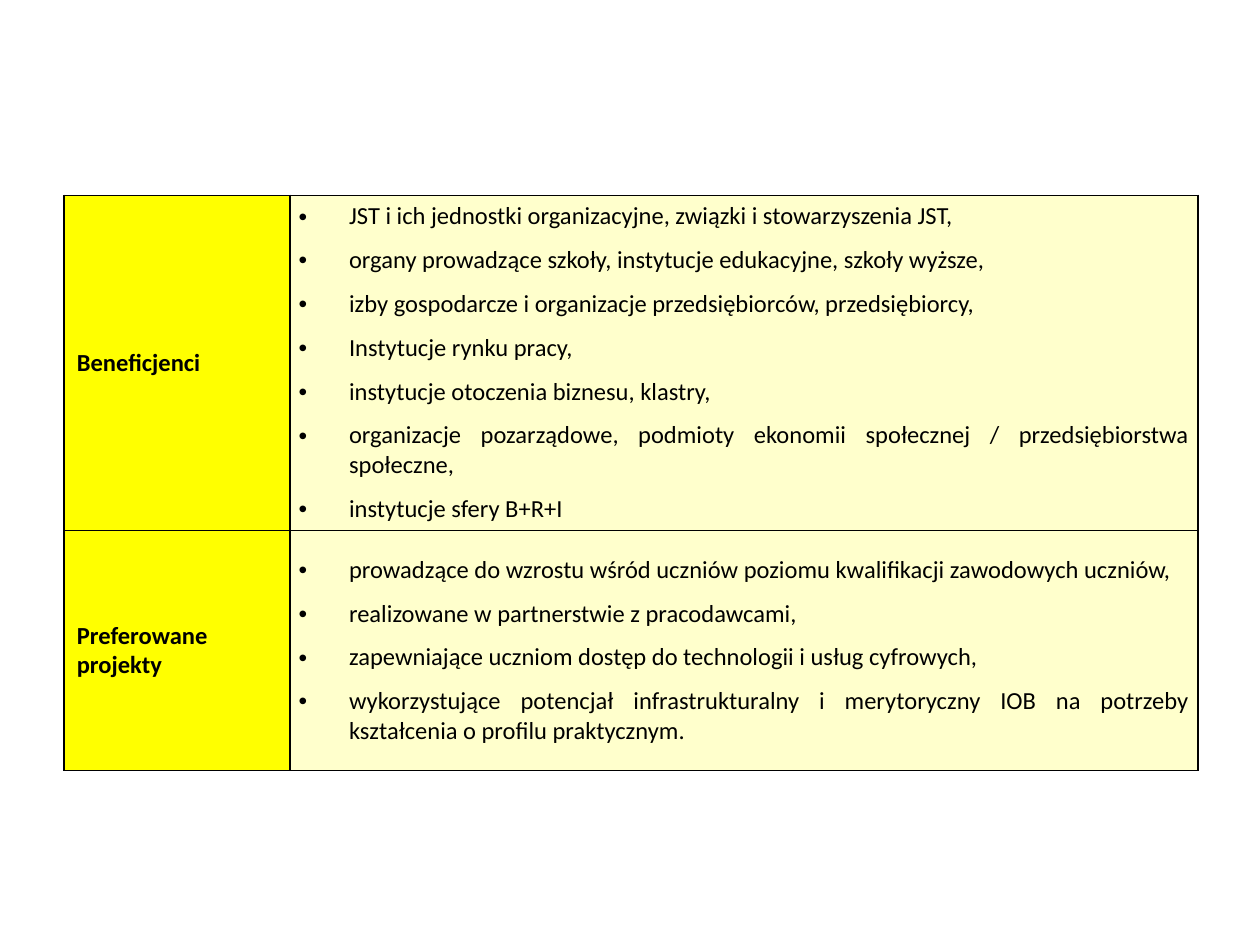
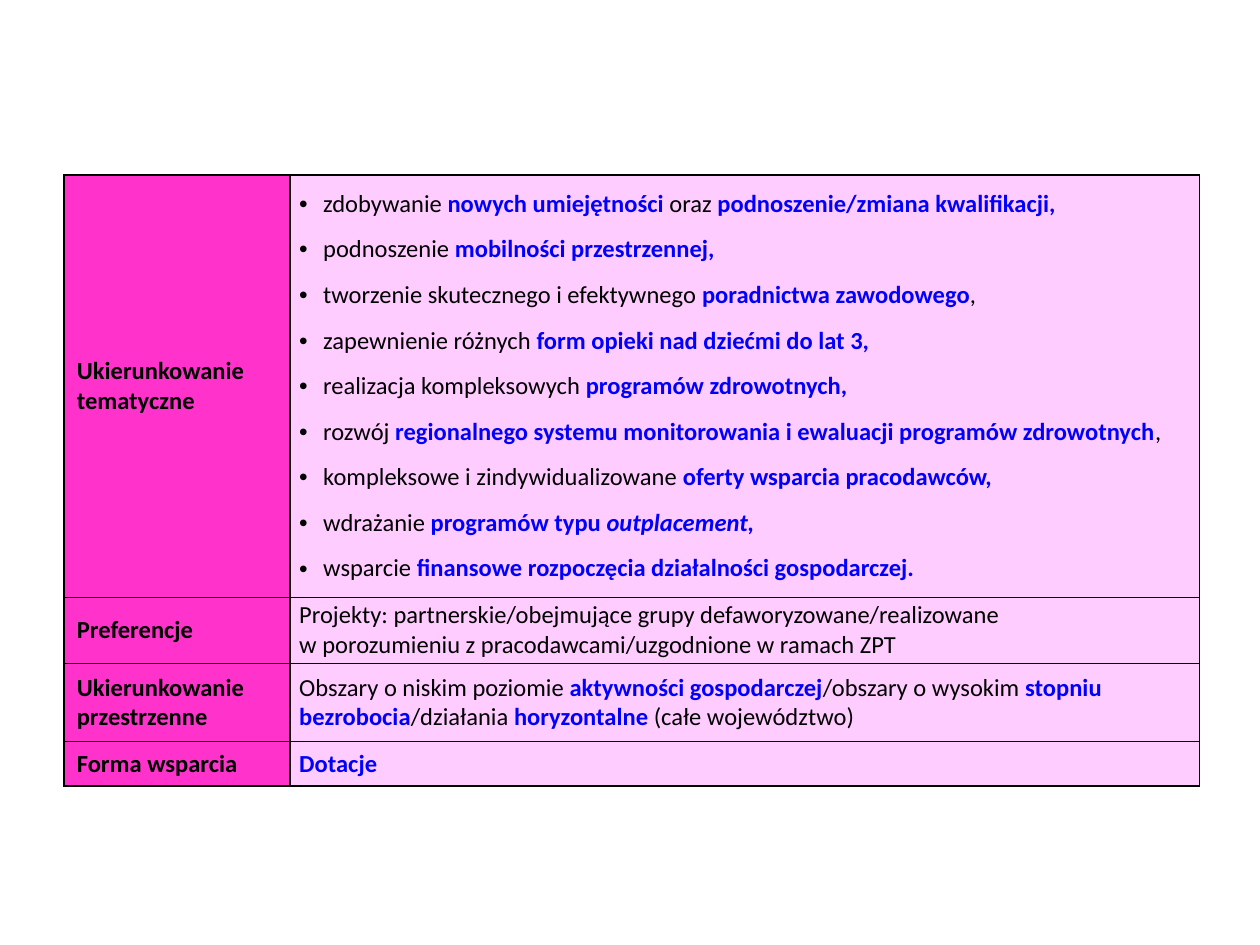
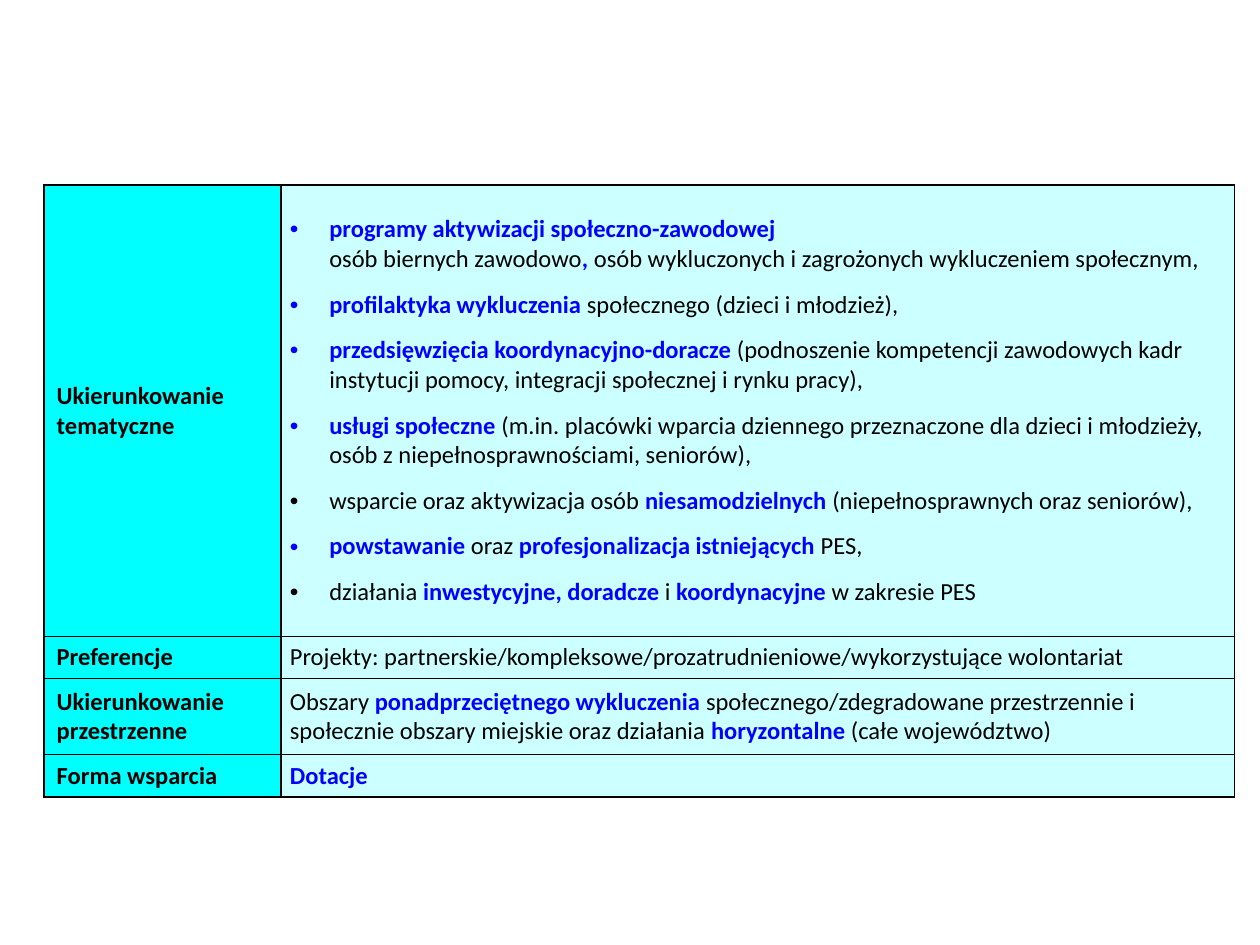
from lxml import etree
from pptx import Presentation
from pptx.dml.color import RGBColor
from pptx.enum.text import MSO_ANCHOR, PP_ALIGN
from pptx.oxml.ns import qn
from pptx.util import Pt

BLACK = RGBColor(0, 0, 0)
BLUE = RGBColor(0, 0, 255)
YELLOW = RGBColor(255, 255, 0)
CREAM = RGBColor(255, 255, 204)
MAGENTA = RGBColor(255, 51, 204)
PINK = RGBColor(255, 204, 255)
CYAN = RGBColor(0, 255, 255)
PALE_CYAN = RGBColor(204, 255, 255)

FONT = "Calibri"
SIZE = 14
KEYWORD, ITALIC = "*", "_"

TABLES = [
    {
        "corner": (36.7, 111.6), "columns": (128.9, 519.1), "colors": (YELLOW, CREAM),
        "align": PP_ALIGN.JUSTIFY, "indent": 28.8, "spacing": (8, 0), "inset": 5.1,
        "rows": [
            (191.5, "Beneficjenci", [
                "JST i ich jednostki organizacyjne, związki i stowarzyszenia JST,",
                "organy prowadzące szkoły, instytucje edukacyjne, szkoły wyższe,",
                "izby gospodarcze i organizacje przedsiębiorców, przedsiębiorcy,",
                "Instytucje rynku pracy,",
                "instytucje otoczenia biznesu, klastry,",
                "organizacje pozarządowe, podmioty ekonomii społecznej / przedsiębiorstwa społeczne,",
                "instytucje sfery B+R+I",
            ]),
            (137.3, "Preferowane projekty", [
                "prowadzące do wzrostu wśród uczniów poziomu kwalifikacji zawodowych uczniów,",
                "realizowane w partnerstwie z pracodawcami,",
                "zapewniające uczniom dostęp do technologii i usług cyfrowych,",
                "wykorzystujące potencjał infrastrukturalny i merytoryczny IOB na potrzeby "
                "kształcenia o profilu praktycznym.",
            ]),
        ],
    },
    {
        "corner": (36.7, 100.1), "columns": (128.9, 519.8), "colors": (MAGENTA, PINK),
        "align": PP_ALIGN.JUSTIFY, "indent": 13.7, "spacing": (6, 3), "inset": 5.4,
        "rows": [
            (241.2, "Ukierunkowanie tematyczne", [
                "zdobywanie *nowych umiejętności *oraz *podnoszenie/zmiana kwalifikacji,*",
                "podnoszenie *mobilności przestrzennej,*",
                "tworzenie skutecznego i efektywnego *poradnictwa zawodowego*,",
                "zapewnienie różnych *form opieki nad dziećmi do lat 3,*",
                "realizacja kompleksowych *programów zdrowotnych,*",
                "rozwój *regionalnego systemu monitorowania i ewaluacji programów zdrowotnych*,",
                "kompleksowe i zindywidualizowane *oferty wsparcia pracodawców,*",
                "wdrażanie *programów typu _outplacement,_*",
                "wsparcie *finansowe rozpoczęcia działalności gospodarczej.*",
            ]),
            (37.9, "Preferencje",
             "Projekty: partnerskie/obejmujące grupy defaworyzowane/realizowane\n"
             "w porozumieniu z pracodawcami/uzgodnione w ramach ZPT"),
            (44.6, "Ukierunkowanie przestrzenne",
             "Obszary o niskim poziomie *aktywności gospodarczej*/obszary o wysokim "
             "*stopniu bezrobocia*/działania *horyzontalne *(całe województwo)"),
            (25.3, "Forma wsparcia", "*Dotacje*"),
        ],
    },
    {
        "corner": (25.2, 105.8), "columns": (135.4, 545), "colors": (CYAN, PALE_CYAN),
        "align": PP_ALIGN.LEFT, "indent": 22.5, "spacing": (6, 3), "inset": 5.1,
        "rows": [
            (257.8, "Ukierunkowanie tematyczne", [
                "*programy aktywizacji społeczno-zawodowej\n*osób biernych zawodowo*, *"
                "osób wykluczonych i zagrożonych wykluczeniem społecznym,",
                "*profilaktyka wykluczenia *społecznego (dzieci i młodzież),",
                "*przedsięwzięcia koordynacyjno-doracze* (podnoszenie kompetencji zawodowych "
                "kadr instytucji pomocy, integracji społecznej i rynku pracy),",
                "*usługi społeczne *(m.in. placówki wparcia dziennego przeznaczone dla dzieci "
                "i młodzieży, osób z niepełnosprawnościami, seniorów),",
                "wsparcie oraz aktywizacja osób *niesamodzielnych *(niepełnosprawnych oraz seniorów),",
                "*powstawanie* oraz *profesjonalizacja istniejących *PES,",
                "działania *inwestycyjne, doradcze *i* koordynacyjne *w zakresie PES",
            ]),
            (24, "Preferencje",
             "Projekty: partnerskie/kompleksowe/prozatrudnieniowe/wykorzystujące wolontariat"),
            (43.3, "Ukierunkowanie przestrzenne",
             "Obszary *ponadprzeciętnego wykluczenia *społecznego/zdegradowane przestrzennie "
             "i społecznie obszary miejskie oraz działania *horyzontalne *(całe województwo)"),
            (24, "Forma wsparcia", "*Dotacje*"),
        ],
    },
]


def add_span(para, words, bold=False, italic=False, color=BLACK):
    for number, line in enumerate(words.split("\n")):
        if number:
            para.add_line_break()
            etree.SubElement(para._p[-1], qn("a:rPr"), sz=str(SIZE * 100))
        if line:
            span = para.add_run()
            span.text = line
            font = span.font
            font.name, font.size = FONT, Pt(SIZE)
            font.bold, font.italic = bold, italic
            font.color.rgb = color


def add_marked_text(para, words):
    for number, part in enumerate(words.split(KEYWORD)):
        keyword = number % 2 == 1
        for place, piece in enumerate(part.split(ITALIC)):
            add_span(para, piece, keyword, place % 2 == 1, BLUE if keyword else BLACK)


def add_bullet(para, indent):
    properties = para._p.get_or_add_pPr()
    properties.set("marL", str(Pt(indent)))
    properties.set("indent", str(-Pt(indent)))
    etree.SubElement(properties, qn("a:buFont"), typeface="Arial")
    etree.SubElement(properties, qn("a:buChar"), char="•")


def set_spacing(para, spacing, first):
    before, after = spacing
    para.space_before = Pt(0 if first else before)
    para.space_after = Pt(after)


def style_cell(cell, color, side, edge):
    cell.fill.solid()
    cell.fill.fore_color.rgb = color
    cell.vertical_anchor = MSO_ANCHOR.MIDDLE
    cell.margin_left = cell.margin_right = Pt(side)
    cell.margin_top = cell.margin_bottom = Pt(edge)
    properties = cell._tc.get_or_add_tcPr()
    for place, name in enumerate(("a:lnL", "a:lnR", "a:lnT", "a:lnB")):
        line = etree.Element(qn(name), w=str(Pt(1)))
        fill = etree.SubElement(line, qn("a:solidFill"))
        etree.SubElement(fill, qn("a:srgbClr"), val=str(BLACK))
        properties.insert(place, line)


def fill_body(cell, body, design):
    bulleted = isinstance(body, list)
    for number, words in enumerate(body if bulleted else [body]):
        para = cell.text_frame.add_paragraph() if number else cell.text_frame.paragraphs[0]
        if bulleted:
            add_bullet(para, design["indent"])
            para.alignment = design["align"]
        set_spacing(para, design["spacing"], number == 0)
        add_marked_text(para, words)


def add_programme_table(page, design):
    rows, columns = design["rows"], design["columns"]
    left, top = design["corner"]
    height = sum(row[0] for row in rows)
    table = page.shapes.add_table(len(rows), len(columns), Pt(left), Pt(top),
                                  Pt(sum(columns)), Pt(height)).table
    table.first_row = table.horz_banding = False
    for column, width in zip(table.columns, columns):
        column.width = Pt(width)
    label_color, body_color = design["colors"]
    for row, (row_height, label, body) in zip(table.rows, rows):
        row.height = Pt(row_height)
        label_cell, body_cell = row.cells
        style_cell(label_cell, label_color, 7.2, 3.6)
        style_cell(body_cell, body_color, design["inset"], 0)
        para = label_cell.text_frame.paragraphs[0]
        set_spacing(para, (6, 3), True)
        add_span(para, label, bold=True)
        fill_body(body_cell, body, design)


def main():
    deck = Presentation()
    deck.slide_width, deck.slide_height = Pt(720), Pt(540)
    blank = deck.slide_layouts.get_by_name("Blank")
    for design in TABLES:
        add_programme_table(deck.slides.add_slide(blank), design)
    deck.save("out.pptx")


if __name__ == "__main__":
    main()
